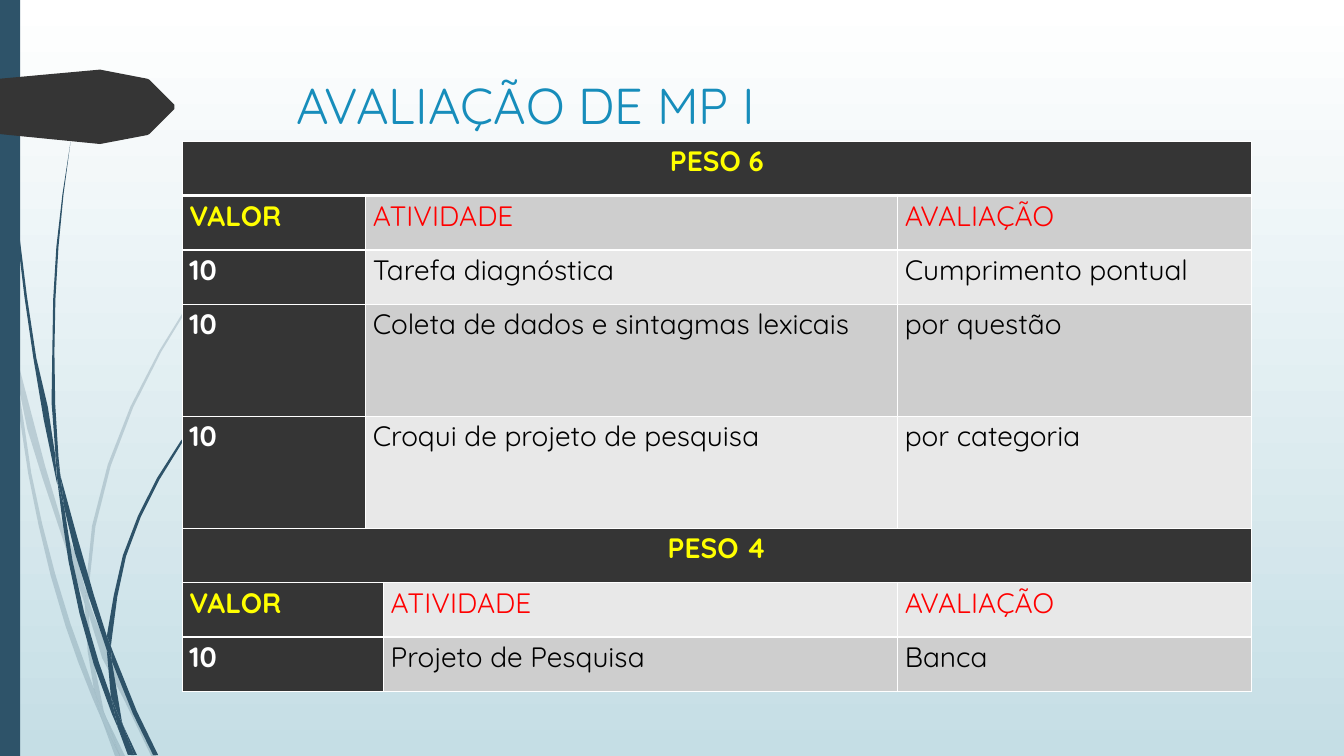
import math
from dataclasses import dataclass

from lxml import etree
from pptx import Presentation
from pptx.dml.color import RGBColor
from pptx.enum.shapes import MSO_SHAPE
from pptx.enum.text import MSO_ANCHOR, PP_ALIGN
from pptx.oxml import parse_xml
from pptx.oxml.ns import nsdecls, qn
from pptx.util import Pt

RECTANGLE = MSO_SHAPE.RECTANGLE
TOP = MSO_ANCHOR.TOP
LEFT, CENTER = PP_ALIGN.LEFT, PP_ALIGN.CENTER
FONT = "Quicksand"
NAVY, CHARCOAL, WHITE, BLACK = "2E5369", "353535", "FFFFFF", "000000"
YELLOW, RED, GRAY, PALE_GRAY = "FFFF00", "FF0000", "CECECE", "E8E8E8"
CORNER_TURN = 0.5
STEP_LENGTH = 50


@dataclass(frozen=True)
class Outline:
    """A closed outline given by its anchor points."""
    points: tuple[tuple[float, float], ...]
    colour: str = NAVY
    opacity: int = 100


@dataclass(frozen=True)
class GradeRow:
    """A table row: its texts, colours, height and the first column of its activity."""
    texts: tuple[str, ...]
    fill: str = CHARCOAL
    label_colour: str = YELLOW
    text_colour: str = RED
    height: float = 38.9
    activity_column: int = 1


PALE_REEDS = (
    ((41.8, 375.8), (60.5, 431.3), (61.2, 421.9), (44.6, 374.4), (10.1, 248.4), (12.2, 270.7)),
    ((66.2, 437), (63.4, 429.1), (63.4, 439.2), (88.6, 499.7), (108, 540), (111.6, 540),
     (91.4, 498.2)),
    ((85.7, 540), (89.3, 540), (75.6, 511.9)),
    ((67, 491.8), (50.4, 445.7), (22.3, 337.7), (12.2, 270.7), (7.9, 252), (20.2, 338.4),
     (46.8, 447.1), (66.2, 499), (72.7, 514.1), (71.3, 509)),
    ((60.5, 431.3), (62.6, 465.1), (67, 491.8), (69.1, 498.2), (75.6, 511.9), (74.2, 508.3),
     (65.5, 465.1), (63.4, 439.2), (63.4, 437.8)),
    ((63.4, 420.5), (79.2, 332.6), (115.2, 251.3), (164.9, 176.4), (193, 142.6), (208.8, 126),
     (224.6, 110.9), (224.6, 110.2), (208.1, 126), (193, 141.8), (164.2, 175.7),
     (113.8, 250.6), (77, 331.9), (61.2, 420.5), (61.2, 421.9), (63.4, 429.1)),
    ((72.7, 514.1), (82.1, 540), (85.7, 540)),
    ((63.4, 437.8), (63.4, 439.2), (63.4, 429.1), (61.2, 421.9), (60.5, 431.3)),
    ((69.1, 498.2), (67, 491.8), (71.3, 509), (72.7, 514.1), (85.7, 540), (75.6, 511.9)),
)
DARK_REEDS = (
    ((5, 79.2), (12.2, 167.8), (23.8, 255.6), (40.3, 343.4), (41, 346.3), (39.6, 329),
     (39.6, 326.2), (25.9, 255.6), (13.7, 167), (5.8, 78.5), (3.6, 34.6), (2.9, 0),
     (2.2, 0), (2.9, 34.6)),
    ((63.4, 426.2), (76.3, 464.4), (76.3, 455.8), (76.3, 454.3), (67, 424.8), (43.2, 339.8),
     (46.1, 363.6)),
    ((81.4, 467.3), (79.2, 461.5), (79.9, 472.3), (95, 509.8), (109.4, 539.3), (113, 539.3),
     (97.9, 508.3)),
    ((79.2, 497.5), (70.6, 473), (51.8, 400.3), (46.1, 363.6), (41, 343.4), (49, 401),
     (67, 474.5), (79.9, 509.8), (84.2, 519.8), (83.5, 516.2)),
    ((43.2, 339.8), (41.8, 326.2), (38.9, 251.3), (41.8, 176.4), (45.4, 139), (50.4, 101.5),
     (44.6, 139), (40.3, 176.4), (37.4, 251.3), (39.6, 323.3)),
    ((95.8, 539.3), (97.9, 539.3), (87.8, 517.7)),
    ((41, 343.4), (46.1, 363.6), (43.2, 339.8), (39.6, 323.3), (39.6, 326.2)),
    ((79.9, 455.8), (90, 397.4), (113.8, 342.7), (147.6, 292.3), (166.3, 269.3),
     (176.4, 258.5), (187.9, 247.7), (187.2, 247.7), (176.4, 257.8), (166.3, 268.6),
     (146.9, 291.6), (112.3, 341.3), (87.8, 396.7), (76.3, 454.3), (79.2, 461.5)),
    ((84.2, 519.8), (91.4, 539.3), (94.3, 539.3)),
    ((76.3, 464.4), (79.2, 497.5), (83.5, 508.3), (87.8, 517.7), (87.1, 515.5),
     (79.9, 472.3), (78.5, 468.7)),
    ((76.3, 464.4), (78.5, 468.7), (79.9, 472.3), (79.2, 461.5), (76.3, 454.3), (76.3, 455.8)),
    ((83.5, 508.3), (79.2, 497.5), (83.5, 516.2), (84.2, 519.8), (93.6, 539.3),
     (95.8, 539.3), (87.8, 517.7)),
)
ARROW = Outline(((0, 56.2), (105.1, 56.2), (106.6, 56.9), (124.6, 74.9), (124.6, 77.8),
                 (106.6, 95.8), (105.1, 96.5), (0, 95.8)), CHARCOAL)
COLUMN_WIDTHS = (131, 7.2, 367.2, 252.7)
GRADE_ROWS = (
    GradeRow(("PESO 6",)),
    GradeRow(("VALOR", "ATIVIDADE", "AVALIAÇÃO"), GRAY),
    GradeRow(("10", "Tarefa diagnóstica", "Cumprimento pontual"), PALE_GRAY, WHITE, BLACK),
    GradeRow(("10", "Coleta de dados e sintagmas lexicais", "por questão"),
             GRAY, WHITE, BLACK, 79.9),
    GradeRow(("10", "Croqui de projeto de pesquisa", "por categoria"),
             PALE_GRAY, WHITE, BLACK, 79.9),
    GradeRow(("PESO 4",)),
    GradeRow(("VALOR", "ATIVIDADE", "AVALIAÇÃO"), PALE_GRAY, activity_column=2),
    GradeRow(("10", "Projeto de Pesquisa", "Banca"), GRAY, WHITE, BLACK, activity_column=2),
)


def paint(fill, colour: str) -> None:
    """Give a fill one solid colour."""
    fill.solid()
    fill.fore_color.rgb = RGBColor.from_string(colour)


def finish(shape, colour: str) -> None:
    """Fill a shape and take away its line and shadow."""
    paint(shape.fill, colour)
    shape.line.fill.background()
    shape.shadow.inherit = False


def heading(before: complex, after: complex) -> complex | None:
    """Return the unit tangent between two sides, or None at a corner."""
    turn = after / before
    if abs(math.atan2(turn.imag, turn.real)) > CORNER_TURN:
        return None
    ratio = abs(after) / abs(before)
    tangent = before * ratio + after / ratio
    return tangent / abs(tangent)


def smooth_outline(points: tuple[tuple[float, float], ...]) -> list[complex]:
    """Round the long sides of an outline, keeping sharp corners."""
    anchors = [complex(*point) for point in points]
    following = anchors[1:] + anchors[:1]
    sides = [end - start for start, end in zip(anchors, following)]
    headings = [heading(sides[index - 1], side) for index, side in enumerate(sides)]
    curve = []
    for index, (start, end, side) in enumerate(zip(anchors, following, sides)):
        leaving, arriving = headings[index], headings[(index + 1) % len(anchors)]
        first = start + (side if leaving is None else leaving * abs(side)) / 3
        second = end - (side if arriving is None else arriving * abs(side)) / 3
        steps = math.ceil(abs(side) / STEP_LENGTH)
        for step in range(steps):
            t = step / steps
            u = 1 - t
            curve.append(u**3 * start + 3 * u * u * t * first + 3 * u * t * t * second + t**3 * end)
    return curve


def draw_outline(page, outline: Outline) -> None:
    """Draw one smooth filled outline."""
    vertices = [(Pt(spot.real), Pt(spot.imag)) for spot in smooth_outline(outline.points)]
    builder = page.shapes.build_freeform(*vertices[0])
    builder.add_line_segments(vertices[1:], close=True)
    shape = builder.convert_to_shape()
    finish(shape, outline.colour)
    if outline.opacity < 100:
        colour = shape.element.spPr.find(qn("a:solidFill"))[0]
        etree.SubElement(colour, qn("a:alpha"), val=str(outline.opacity * 1000))


def write(frame, text: str, size: float, colour: str, bold: bool, align=LEFT):
    """Write one paragraph and return it."""
    para = frame.paragraphs[0]
    para.text = text
    para.alignment = align
    para.font.name, para.font.size, para.font.bold = FONT, Pt(size), bold
    para.font.color.rgb = RGBColor.from_string(colour)
    return para


def format_cell(cell, fill: str, row: int) -> None:
    """Give a cell its white borders and its fill."""
    widths = {"L": 1, "R": 1, "T": 3 if row == 1 else 1, "B": 3 if row == 0 else 1}
    for side, width in widths.items():
        cell._tc.get_or_add_tcPr().append(parse_xml(
            f'<a:ln{side} {nsdecls("a")} w="{Pt(width)}"><a:solidFill>'
            f'<a:srgbClr val="{WHITE}"/></a:solidFill></a:ln{side}>'))
    paint(cell.fill, fill)


def draw_grades(page) -> None:
    """Draw the grading table."""
    height = sum(row.height for row in GRADE_ROWS)
    table = page.shapes.add_table(len(GRADE_ROWS), len(COLUMN_WIDTHS), Pt(130.3), Pt(100.8),
                                  Pt(sum(COLUMN_WIDTHS)), Pt(height)).table
    table.first_row = table.horz_banding = False
    for column, width in zip(table.columns, COLUMN_WIDTHS):
        column.width = Pt(width)
    for number, row in enumerate(GRADE_ROWS):
        table.rows[number].height = Pt(row.height)
        is_band = len(row.texts) == 1
        starts = (0,) if is_band else (0, row.activity_column, 3)
        for column in range(len(COLUMN_WIDTHS)):
            is_label = is_band or column < row.activity_column
            format_cell(table.cell(number, column), CHARCOAL if is_label else row.fill, number)
        for text, start, end in zip(row.texts, starts, starts[1:] + (len(COLUMN_WIDTHS),)):
            cell = table.cell(number, start)
            if end - start > 1:
                cell.merge(table.cell(number, end - 1))
            cell.margin_left = cell.margin_right = Pt(5)
            cell.margin_top = cell.margin_bottom = Pt(0)
            colour = row.text_colour if start else row.label_colour
            para = write(cell.text_frame, text, 20, colour, start == 0, CENTER if is_band else LEFT)
            para.line_spacing = 1.07


def main() -> None:
    """Build the slide and save it."""
    deck = Presentation()
    deck.slide_width, deck.slide_height = Pt(960), Pt(540)
    page = deck.slides.add_slide(deck.slide_layouts[5])
    backdrop = page.background.fill
    backdrop.gradient()
    backdrop.gradient_angle = 270
    for stop, colour in zip(backdrop.gradient_stops, (WHITE, "C5DEE5")):
        stop.color.rgb = RGBColor.from_string(colour)
    for points in PALE_REEDS:
        draw_outline(page, Outline(points, opacity=20))
    for points in DARK_REEDS:
        draw_outline(page, Outline(points))
    finish(page.shapes.add_shape(RECTANGLE, Pt(0), Pt(0), Pt(14.4), Pt(540)), NAVY)
    draw_outline(page, ARROW)
    title = page.shapes.title
    title.left, title.top, title.width, title.height = Pt(204.5), Pt(49), Pt(702), Pt(100.8)
    title.text_frame.vertical_anchor = TOP
    write(title.text_frame, "AVALIAÇÃO DE MP I", 36, "178DBB", False)
    draw_grades(page)
    deck.save("out.pptx")


if __name__ == "__main__":
    main()
